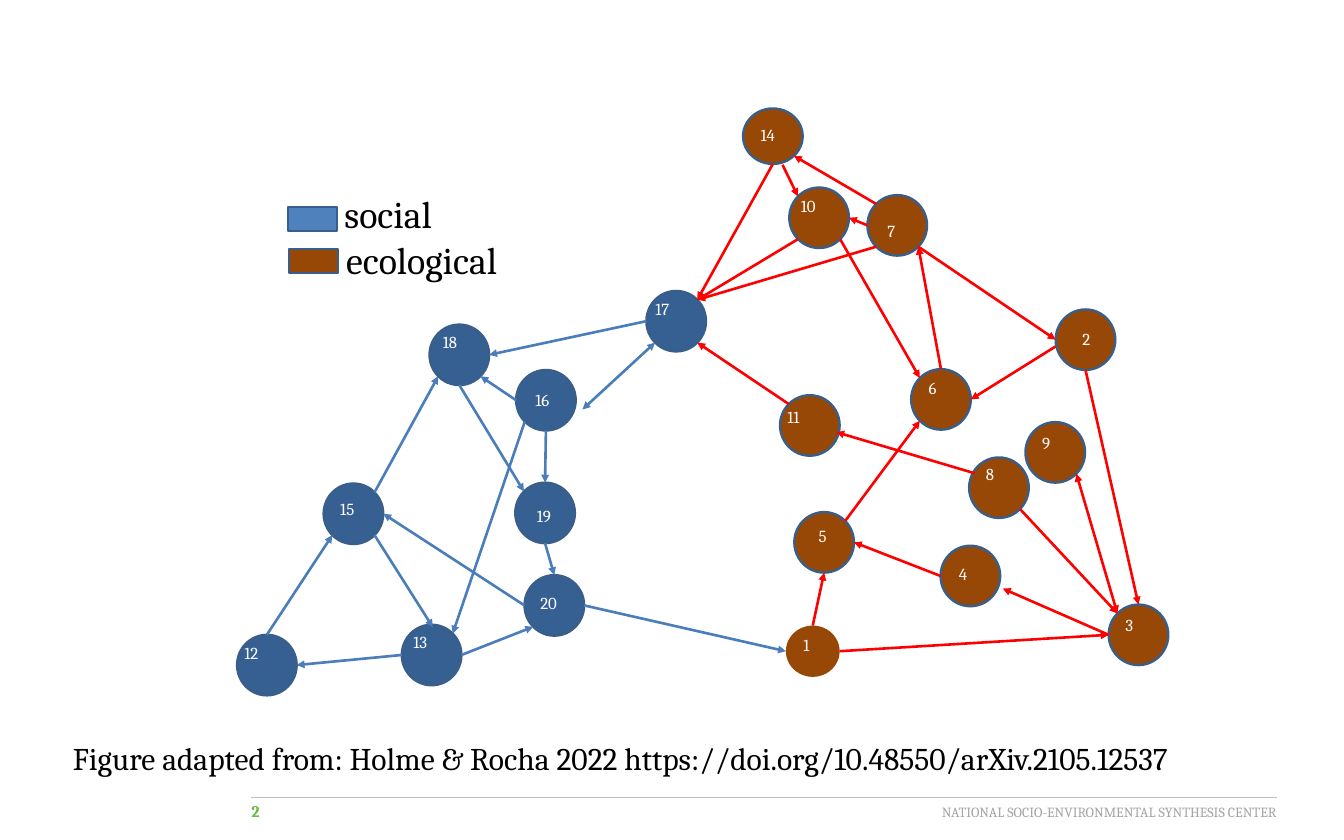
"""Build a slide with a directed network of social and ecological nodes."""
import math

import pptx
import pptx.dml.color
import pptx.enum.shapes
import pptx.enum.text
import pptx.oxml.ns
import pptx.util
from lxml import etree
from pptx.util import Inches

COLORS = {
    "social": "366092", "ecological": "974806", "outline": "395E89",
    "social_key": "4F81BD", "social_link": "4A7DBA", "ecological_link": "FF0000",
    "white": "FFFFFF", "black": "000000", "number": "6BBB42",
    "footer": "A5A5A5", "rule": "BFBFBF",
}
FONT = "Cambria"
NODE_SIZE = (0.71, 0.72)
SPECIAL_SIZES = {1: (0.64, 0.61), 14: (0.71, 0.66)}

# number: (node left, node top, label left, label top)
NODES = {
    "social": {
        15: (3.85, 5.75, 3.95, 5.88), 13: (4.78, 7.43, 4.82, 7.46),
        20: (6.24, 6.84, 6.33, 7.0), 18: (5.11, 3.86, 5.17, 3.89),
        17: (7.69, 3.46, 7.7, 3.5), 12: (2.82, 7.55, 2.81, 7.59),
        19: (6.13, 5.74, 6.29, 5.96), 16: (6.14, 4.4, 6.27, 4.58),
    },
    "ecological": {
        14: (8.84, 1.29, 8.95, 1.43), 10: (9.39, 2.23, 9.43, 2.28),
        7: (10.32, 2.32, 10.46, 2.58), 5: (9.45, 6.09, 9.64, 6.2),
        11: (9.28, 4.7, 9.27, 4.79), 6: (10.84, 4.39, 10.95, 4.44),
        4: (11.19, 6.49, 11.31, 6.66), 8: (11.53, 5.44, 11.63, 5.46),
        3: (13.19, 7.19, 13.29, 7.26), 2: (12.56, 3.68, 12.78, 3.86),
        9: (12.2, 5.02, 12.3, 5.1), 1: (9.35, 7.44, 9.46, 7.5),
    },
}
LINKS = {
    "ecological": [
        ((11, "nw"), (17, "se")), ((7, "sw"), (17, "ne")),
        ((9.31, 1.96), (10, "nw")), ((7, "se"), (2, "w")),
        ((6, "n"), (7, "se")), ((10, "se"), (6, "nw")),
        ((7, "w"), (10, "e")), ((12.56, 4.12), (6, "e")),
        ((2, "s"), (3, "n")), ((8, "se"), (3, "nw")),
        ((7, "nw"), (14, "se")), ((3, "w"), (11.93, 7.0)),
        ((1, "e"), (3, "w")), ((1, "n"), (5, "s")),
        ((4, "w"), (5, "e")), ((11.6, 5.63), (9.95, 5.14)),
        ((10, "sw"), (17, "ne")), ((3, "nw"), (9, "se"), "both"),
        ((5, "ne"), (6, "sw")), ((14, "s"), (17, "ne")),
    ],
    "social": [
        ((17, "w"), (18, "e")), ((15, "se"), (5.15, 7.46)),
        ((15, "ne"), (18, "sw")), ((16, "w"), (18, "se")),
        ((17, "sw"), (6.93, 4.87), "both"), ((20, "w"), (15, "e")),
        ((16, "s"), (19, "n")), ((18, "s"), (19, "nw")),
        ((13, "e"), (20, "sw")), ((13, "w"), (12, "e")),
        ((19, "s"), (20, "n")), ((16, "sw"), (13, "ne")),
        ((12, "n"), (15, "sw")), ((20, "e"), (1, "w")),
    ],
}
LEGEND = [
    ("social", "social_key", (3.43, 2.46), (4.0, 2.22, 1.49, 0.65)),
    ("ecological", "ecological", (3.44, 2.96), (4.02, 2.76, 2.28, 0.65)),
]
CITATION = "Figure adapted from: Holme & Rocha 2022 https://doi.org/10.48550/arXiv.2105.12537"
COMPASS = ["e", "se", "s", "sw", "w", "nw", "n", "ne"]


def rgb(name):
    return pptx.dml.color.RGBColor.from_string(COLORS[name])


def add_text(slide, text, box, size, color, bold=False, right=False, margin=0.1):
    tb = slide.shapes.add_textbox(*map(Inches, box))
    tf = tb.text_frame
    tf.word_wrap = True
    tf.margin_left = tf.margin_right = Inches(margin)
    tf.text = text
    p = tf.paragraphs[0]
    if right:
        p.alignment = pptx.enum.text.PP_ALIGN.RIGHT
    font = p.runs[0].font
    font.name, font.size, font.bold = FONT, pptx.util.Pt(size), bold
    font.color.rgb = rgb(color)


def add_filled(slide, kind, box, fill, outlined=True):
    sp = slide.shapes.add_shape(kind, *map(Inches, box))
    sp.shadow.inherit = False
    sp.fill.solid()
    sp.fill.fore_color.rgb = rgb(fill)
    if outlined:
        sp.line.color.rgb = rgb("outline")
        sp.line.width = pptx.util.Pt(2)
    else:
        sp.line.fill.background()


def add_line(slide, start, end, color, width, ends=()):
    cxn = slide.shapes.add_connector(
        pptx.enum.shapes.MSO_CONNECTOR.STRAIGHT, *map(Inches, (*start, *end)))
    cxn.line.color.rgb = rgb(color)
    cxn.line.width = pptx.util.Pt(width)
    ln = cxn.line._get_or_add_ln()
    for tag in ends:
        etree.SubElement(ln, pptx.oxml.ns.qn(tag), type="triangle")
    etree.SubElement(cxn._element.spPr, pptx.oxml.ns.qn("a:effectLst"))


def node_box(number):
    left, top = {**NODES["social"], **NODES["ecological"]}[number][:2]
    return (left, top, *SPECIAL_SIZES.get(number, NODE_SIZE))


def link_point(point):
    if point[1] not in COMPASS:
        return point
    left, top, width, height = node_box(point[0])
    angle = COMPASS.index(point[1]) * math.pi / 4
    return (left + width / 2 * (1 + math.cos(angle)),
            top + height / 2 * (1 + math.sin(angle)))


def main():
    prs = pptx.Presentation()
    prs.slide_width, prs.slide_height = Inches(15.99), Inches(9.99)
    slide = prs.slides.add_slide(prs.slide_layouts[6])
    shapes = pptx.enum.shapes.MSO_SHAPE

    add_text(slide, "2", (2.99, 9.48, 0.58, 0.29), 14, "number", bold=True, margin=0)
    add_text(slide, "NATIONAL SOCIO-ENVIRONMENTAL SYNTHESIS CENTER",
             (10.14, 9.51, 5.05, 0.3), 12, "footer", right=True, margin=0)
    add_line(slide, (2.99, 9.48), (15.19, 9.48), "rule", 0.75)

    for group, nodes in NODES.items():
        for number in nodes:
            add_filled(slide, shapes.OVAL, node_box(number), group, outlined=number != 1)
    for group, links in LINKS.items():
        for start, end, *both in links:
            ends = ("a:headEnd", "a:tailEnd") if both else ("a:tailEnd",)
            add_line(slide, link_point(start), link_point(end), group + "_link", 2.25, ends)
    for nodes in NODES.values():
        for number, (_, _, left, top) in nodes.items():
            width = 0.49 if number < 10 else 0.66
            add_text(slide, str(number), (left, top, width, 0.59), 14.4, "white")

    for label, fill, corner, label_box in LEGEND:
        add_filled(slide, shapes.RECTANGLE, (*corner, 0.58, 0.29), fill)
        add_text(slide, label, label_box, 32.4, "black")
    add_text(slide, CITATION, (0.77, 8.74, 14.84, 0.56), 27, "black")
    prs.save("out.pptx")


if __name__ == "__main__":
    main()
